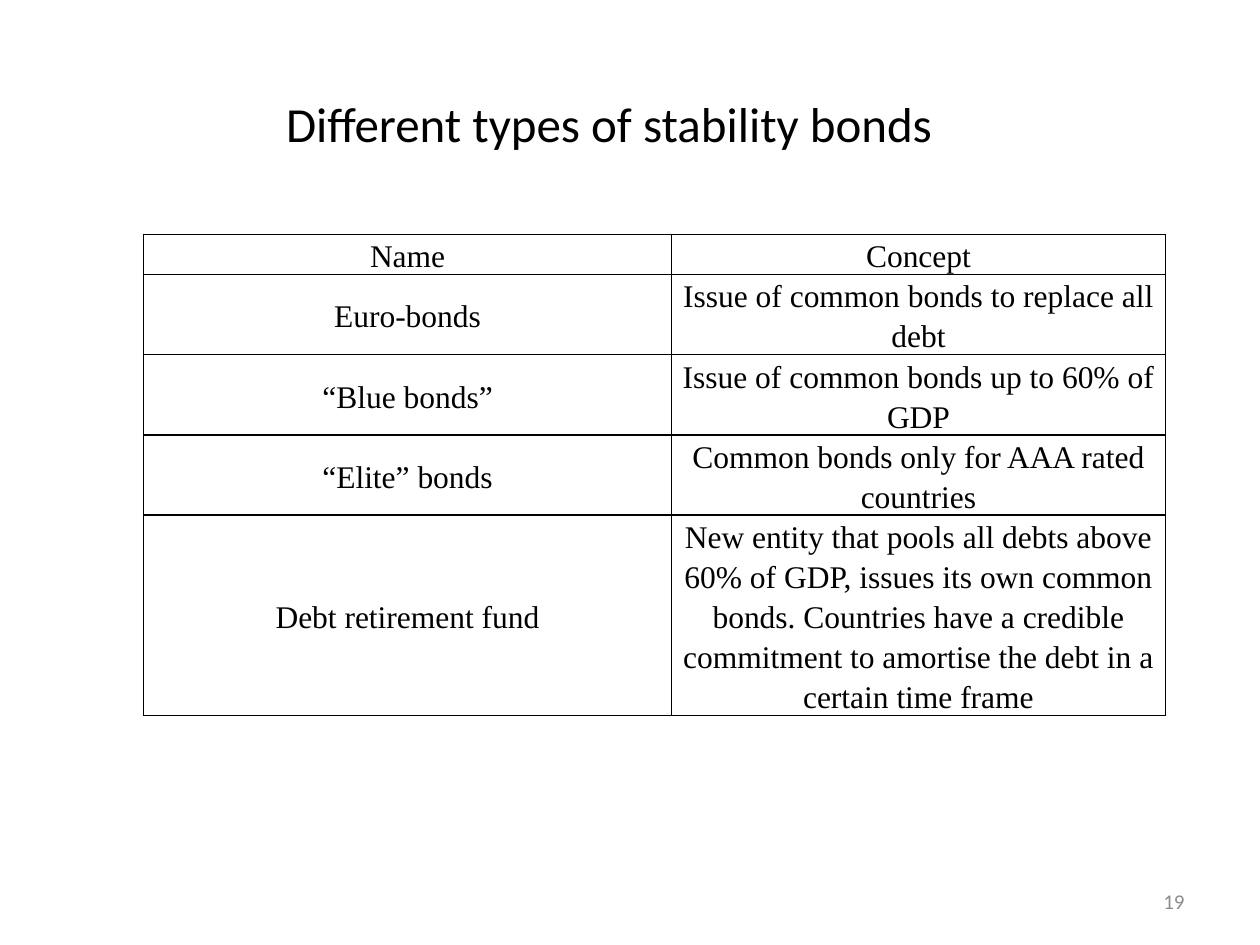
from pptx import Presentation
from pptx.dml.color import RGBColor
from pptx.enum.text import MSO_ANCHOR, PP_ALIGN
from pptx.oxml import parse_xml
from pptx.oxml.ns import nsdecls
from pptx.util import Inches, Pt

LEFT, CENTER, RIGHT = PP_ALIGN.LEFT, PP_ALIGN.CENTER, PP_ALIGN.RIGHT
TOP, MIDDLE = MSO_ANCHOR.TOP, MSO_ANCHOR.MIDDLE

ROWS = [
    ("Name", "Concept", 1),
    ("Euro-bonds", "Issue of common bonds to replace all debt", 2),
    ("“Blue bonds”", "Issue of common bonds up to 60% of GDP", 2),
    ("“Elite” bonds", "Common bonds only for AAA rated countries", 2),
    ("Debt retirement fund",
     "New entity that pools all debts above 60% of GDP, issues its own common "
     "bonds. Countries have a credible commitment to amortise the debt in a "
     "certain time frame", 5),
]
WIDTHS = (4.19, 3.92)
HEIGHT = 3.82


def color(text):
    return RGBColor.from_string(text)


def write(frame, text, size=18, face="Calibri", ink="000000", align=LEFT,
          line=None, after=None):
    para = frame.paragraphs[0]
    para.alignment = align
    if line:
        para.line_spacing = line
    if after:
        para.space_after = Pt(after)
    run = para.add_run()
    run.text = text
    run.font.size = Pt(size)
    run.font.name = face
    run.font.bold = False
    run.font.color.rgb = color(ink)


class Deck:
    serif = "Times New Roman"
    ink = "000000"
    gray = "8C8C8C"

    def __init__(self, wide, high):
        self.prs = Presentation()
        self.prs.slide_width = Inches(wide)
        self.prs.slide_height = Inches(high)
        self.slide = self.prs.slides.add_slide(self.prs.slide_layouts[5])

    def title(self, text, x, y, w, h):
        shape = self.slide.shapes.title
        shape.left, shape.top, shape.width, shape.height = map(Inches, (x, y, w, h))
        shape.text_frame.word_wrap = False
        shape.text_frame.vertical_anchor = TOP
        write(shape.text_frame, text, size=28, ink=self.ink)

    def number(self, text, x, y, w, h):
        box = self.slide.shapes.add_textbox(*map(Inches, (x, y, w, h)))
        box.text_frame.word_wrap = True
        box.text_frame.vertical_anchor = MIDDLE
        write(box.text_frame, text, size=12, ink=self.gray, align=RIGHT)

    def border(self, cell):
        props = cell._tc.get_or_add_tcPr()
        for side in "LRTB":
            props.append(parse_xml(
                f'<a:ln{side} {nsdecls("a")} w="{Pt(1)}"><a:solidFill>'
                f'<a:srgbClr val="{self.ink}"/></a:solidFill></a:ln{side}>'))

    def table(self, rows, widths, x, y, high):
        frame = self.slide.shapes.add_table(
            len(rows), len(widths), Inches(x), Inches(y),
            Inches(sum(widths)), Inches(high))
        grid = frame.table
        grid.first_row = grid.horz_banding = False
        for col, wide in zip(grid.columns, widths):
            col.width = Inches(wide)
        total = sum(row[-1] for row in rows)
        for r, (*texts, lines) in enumerate(rows):
            grid.rows[r].height = Inches(high * lines / total)
            for c, text in enumerate(texts):
                self.cell(grid.cell(r, c), text)

    def cell(self, cell, text):
        self.border(cell)
        cell.fill.background()
        cell.vertical_anchor = MIDDLE
        cell.margin_left = cell.margin_right = Inches(0.07)
        cell.margin_top = cell.margin_bottom = 0
        write(cell.text_frame, text, face=self.serif, ink=self.ink,
              align=CENTER, line=1.15, after=10)


def main():
    deck = Deck(10, 7.5)
    deck.table(ROWS, WIDTHS, 1.14, 1.86, HEIGHT)
    deck.title("Different types of stability bonds", 2.17, 0.69, 5.49, 0.57)
    deck.number("19", 7.17, 6.95, 2.33, 0.4)
    deck.prs.save("out.pptx")


if __name__ == "__main__":
    main()
